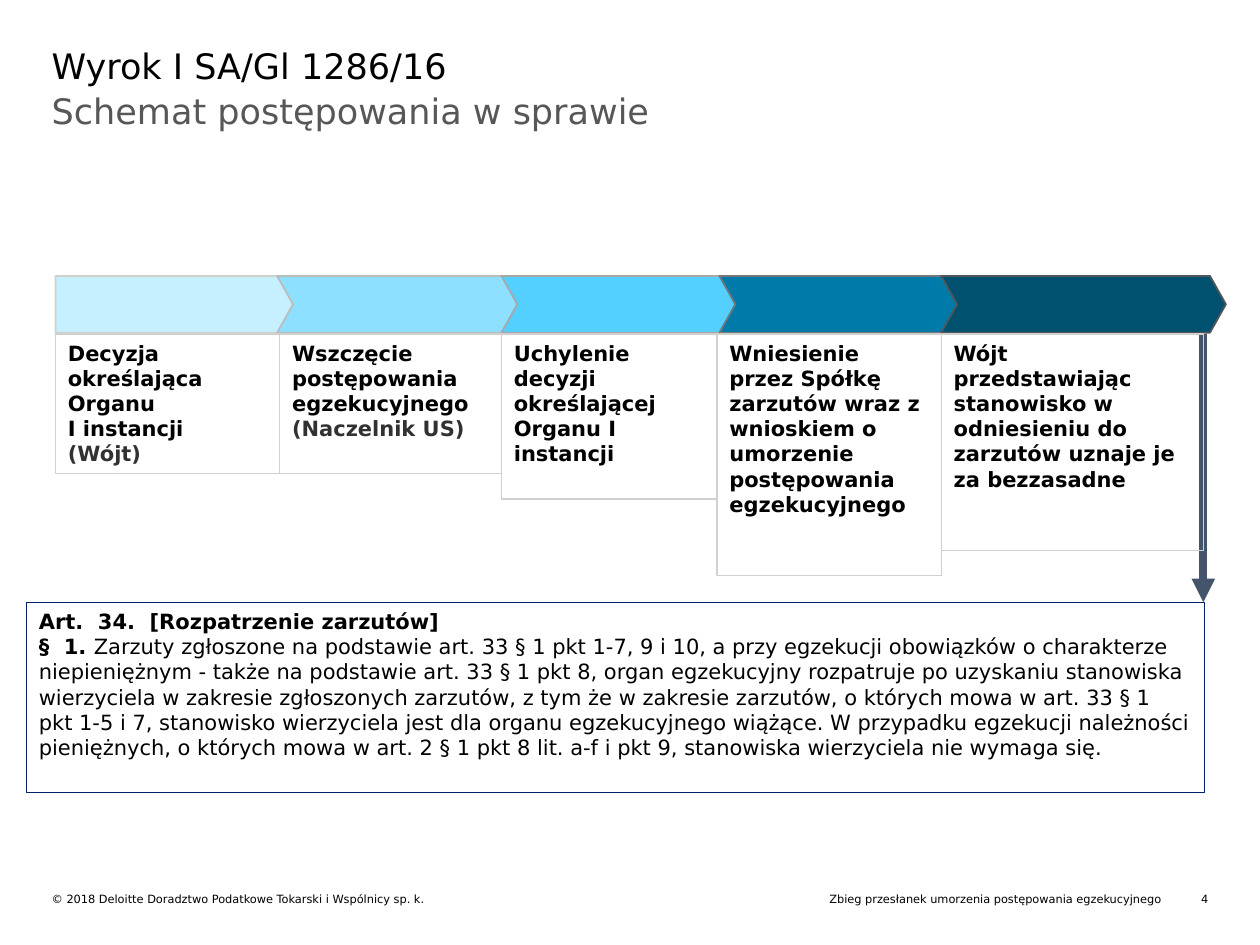
from collections import namedtuple

from lxml.etree import SubElement
from pptx import Presentation
from pptx.dml.color import RGBColor
from pptx.enum.shapes import MSO_CONNECTOR, MSO_SHAPE
from pptx.enum.text import MSO_ANCHOR, PP_ALIGN
from pptx.oxml.ns import qn
from pptx.util import Inches, Pt

# The slide is a grid of 1000 columns by 750 rows; boxes are counted in its cells.
COLUMNS, ROWS = 1000, 750
SLIDE_WIDTH, SLIDE_HEIGHT = Inches(10), Inches(7.5)

FONT = "DejaVu Sans"
COLORS = {
    "text": "000000",
    "subtitle": "575757",
    "authority": "313131",
    "card_line": "D0D0CE",
    "article_line": "012169",
    "link": "44546A",
}
Box = namedtuple("Box", "left top width height")
# Offsets and widths are columns from the left edge of the timeline.
Stage = namedtuple("Stage", "arrow_left arrow_width fill line left width height text")

STAGES = [
    Stage(0, 209, "C6EFFF", "D0D0CE", 0, 178, 111,
          [[("Decyzja określająca Organu \nI instancji", {})],
           [("(Wójt)", {"color": COLORS["authority"]})]]),
    Stage(176, 210, "8DE0FF", "BBBCBC", 178, 176, 111,
          [[("Wszczęcie postępowania egzekucyjnego", {})],
           [("(Naczelnik US)", {"color": COLORS["authority"]})]]),
    Stage(354, 210, "53D0FF", "A7A8AA", 354, 171, 131,
          "Uchylenie decyzji określającej Organu I instancji"),
    Stage(527, 210, "007AA8", "75787B", 525, 178, 192,
          "Wniesienie przez Spółkę zarzutów wraz z wnioskiem o umorzenie "
          "postępowania egzekucyjnego"),
    Stage(703, 226, "005170", "53565A", 703, 208, 172,
          "Wójt przedstawiając stanowisko w odniesieniu do zarzutów uznaje je "
          "za bezzasadne"),
]

ARTICLE = [
    [("Art.  34.  [Rozpatrzenie zarzutów]", {"bold": True})],
    [("§  1. ", {"bold": True}),
     ("Zarzuty zgłoszone na podstawie art. 33 § 1 pkt 1-7, 9 i 10, a przy egzekucji "
      "obowiązków o charakterze niepieniężnym - także na podstawie art. 33 § 1 pkt 8, "
      "organ egzekucyjny rozpatruje po uzyskaniu stanowiska wierzyciela w zakresie "
      "zgłoszonych zarzutów, z tym że w zakresie zarzutów, o których mowa w art. 33 § 1 "
      "pkt 1-5 i 7, stanowisko wierzyciela jest dla organu egzekucyjnego wiążące. "
      "W przypadku egzekucji należności pieniężnych, o których mowa w art. 2 § 1 pkt 8 "
      "lit. a-f i pkt 9, stanowiska wierzyciela nie wymaga się.", {})],
]


def across(columns):
    return round(SLIDE_WIDTH * columns / COLUMNS)


def down(rows):
    return round(SLIDE_HEIGHT * rows / ROWS)


def place(box):
    return across(box.left), down(box.top), across(box.width), down(box.height)


def write(frame, text, size=12, color=COLORS["text"], bold=False, align=PP_ALIGN.LEFT):
    """Fill a frame with a string, or with paragraphs of (text, overrides) runs."""
    frame.word_wrap = True
    frame.vertical_anchor = MSO_ANCHOR.TOP
    paragraphs = [[(text, {})]] if isinstance(text, str) else text
    for index, runs in enumerate(paragraphs):
        paragraph = frame.add_paragraph() if index else frame.paragraphs[0]
        paragraph.alignment = align
        for words, overrides in runs:
            look = {"color": color, "bold": bold, **overrides}
            for number, line in enumerate(words.split("\n")):
                if number:
                    paragraph.add_line_break()
                run = paragraph.add_run()
                run.text = line
                run.font.name = FONT
                run.font.size = Pt(size)
                run.font.bold = look["bold"]
                run.font.color.rgb = RGBColor.from_string(look["color"])


def add_label(slide, box, text, **look):
    frame = slide.shapes.add_textbox(*place(box)).text_frame
    frame.margin_left = frame.margin_right = frame.margin_top = frame.margin_bottom = 0
    write(frame, text, **look)


def add_outline(slide, preset, box, line, weight, fill=None):
    shape = slide.shapes.add_shape(preset, *place(box))
    shape.shadow.inherit = False
    if fill:
        shape.fill.solid()
        shape.fill.fore_color.rgb = RGBColor.from_string(fill)
    else:
        shape.fill.background()
    shape.line.color.rgb = RGBColor.from_string(line)
    shape.line.width = Pt(weight)
    return shape


def add_heading(slide, box):
    add_label(slide, box._replace(height=44), "Wyrok I SA/Gl 1286/16", size=20)
    add_label(slide, box._replace(top=box.top + 36, height=box.height - 36),
              "Schemat postępowania w sprawie", size=20, color=COLORS["subtitle"])


def add_link(slide, column, top, bottom):
    """Draw the arrow that leads from the last stage down to the article."""
    link = slide.shapes.add_connector(
        MSO_CONNECTOR.STRAIGHT, across(column), down(top), across(column), down(bottom))
    link.line.color.rgb = RGBColor.from_string(COLORS["link"])
    link.line.width = Pt(4.5)
    SubElement(link.line._get_or_add_ln(), qn("a:tailEnd"), type="triangle")
    SubElement(link._element.spPr, qn("a:effectLst"))


def add_timeline(slide, box):
    arrow_height, card_offset = 45, 46
    for index, stage in enumerate(STAGES):
        arrow = add_outline(
            slide, MSO_SHAPE.CHEVRON if index else MSO_SHAPE.PENTAGON,
            Box(box.left + stage.arrow_left, box.top, stage.arrow_width, arrow_height),
            stage.line, 1, stage.fill)
        arrow.adjustments[0] = 0.28
    for stage in STAGES:
        card = add_outline(
            slide, MSO_SHAPE.RECTANGLE,
            Box(box.left + stage.left, box.top + card_offset, stage.width, stage.height),
            COLORS["card_line"], 0.75)
        write(card.text_frame, stage.text, bold=True)


def add_article(slide, box):
    article = add_outline(slide, MSO_SHAPE.RECTANGLE, box, COLORS["article_line"], 0.75)
    write(article.text_frame, ARTICLE)


def add_footer(slide, box):
    right = box.left + box.width
    add_label(slide, box._replace(width=439),
              "© 2018 Deloitte Doradztwo Podatkowe Tokarski i Wspólnicy sp. k.", size=6.5)
    add_label(slide, box._replace(left=right - 439, width=402),
              "Zbieg przesłanek umorzenia postępowania egzekucyjnego",
              size=6.5, align=PP_ALIGN.RIGHT)
    add_label(slide, box._replace(left=right - 25, width=25), "4",
              size=6.5, align=PP_ALIGN.RIGHT)


def main():
    deck = Presentation()
    deck.slide_width, deck.slide_height = SLIDE_WIDTH, SLIDE_HEIGHT
    slide = deck.slides.add_slide(deck.slide_layouts[6])
    timeline = Box(44, 219, 929, 238)
    article = Box(21, 478, 935, 151)
    add_footer(slide, Box(41, 708, 918, 11))
    add_heading(slide, Box(41, 35, 918, 119))
    add_link(slide, 955, timeline.top + 46, article.top)
    add_timeline(slide, timeline)
    add_article(slide, article)
    deck.save("out.pptx")


if __name__ == "__main__":
    main()
